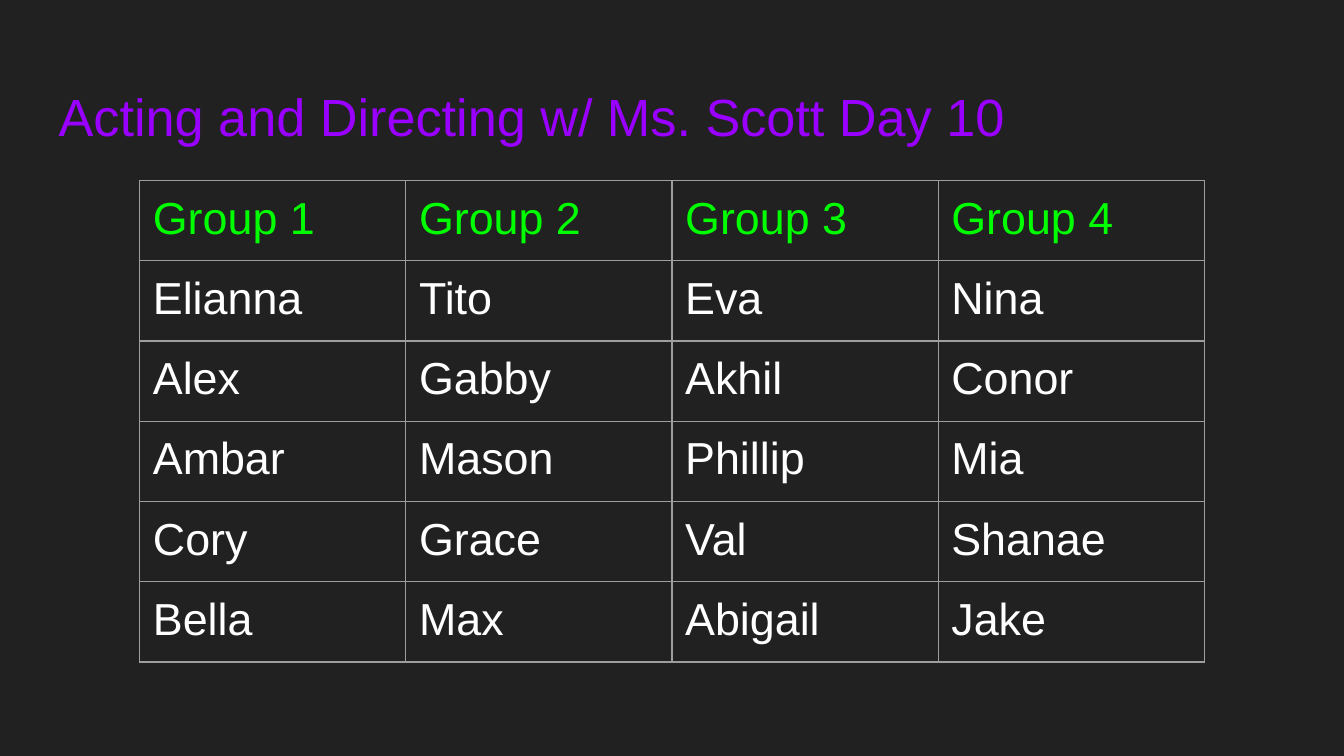
from dataclasses import dataclass

from lxml import etree
from pptx import Presentation
from pptx.dml.color import RGBColor
from pptx.enum.text import MSO_ANCHOR
from pptx.oxml.ns import qn
from pptx.util import Cm, Pt

TOP = MSO_ANCHOR.TOP

TITLE = "Acting and Directing w/ Ms. Scott Day 10"
GROUPS = {
    "Group 1": ["Elianna", "Alex", "Ambar", "Cory", "Bella"],
    "Group 2": ["Tito", "Gabby", "Mason", "Grace", "Max"],
    "Group 3": ["Eva", "Akhil", "Phillip", "Val", "Abigail"],
    "Group 4": ["Nina", "Conor", "Mia", "Shanae", "Jake"],
}


@dataclass(frozen=True)
class Theme:
    font: str = "Arial"
    background: str = "212121"
    title: str = "9900FF"
    group: str = "00FF00"
    member: str = "FFFFFF"
    border: str = "9E9E9E"
    title_size: int = 28
    table_size: int = 24
    border_width: float = 0.75


THEME = Theme()
SLIDE_WIDTH, SLIDE_HEIGHT = Cm(25.4), Cm(14.29)
INSET = Cm(0.25)
COLUMN_WIDTH, ROW_HEIGHT = Cm(5.03), Cm(1.07)
TABLE_TOP = Cm(3.41)


def write(text_frame, text, size, color):
    text_frame.text = text
    font = text_frame.paragraphs[0].runs[0].font
    font.name = THEME.font
    font.size = Pt(size)
    font.color.rgb = RGBColor.from_string(color)


def add_borders(cell):
    properties = cell._tc.get_or_add_tcPr()
    for side in ("lnL", "lnR", "lnT", "lnB"):
        line = etree.SubElement(properties, qn(f"a:{side}"), w=str(Pt(THEME.border_width)))
        fill = etree.SubElement(line, qn("a:solidFill"))
        etree.SubElement(fill, qn("a:srgbClr"), val=THEME.border)


def add_title(slide):
    title = slide.shapes.add_textbox(Cm(0.86), Cm(1.24), Cm(23.67), Cm(1.6)).text_frame
    title.word_wrap = True
    title.vertical_anchor = TOP
    title.margin_left = title.margin_right = INSET
    title.margin_top, title.margin_bottom = Cm(0.35), Cm(0.15)
    write(title, TITLE, THEME.title_size, THEME.title)


def add_groups(slide):
    column_count = len(GROUPS)
    row_count = 1 + max(len(members) for members in GROUPS.values())
    width = COLUMN_WIDTH * column_count
    table = slide.shapes.add_table(
        row_count, column_count, (SLIDE_WIDTH - width) // 2, TABLE_TOP,
        width, ROW_HEIGHT * row_count,
    ).table
    table.first_row = table.horz_banding = False

    for column, (group, members) in enumerate(GROUPS.items()):
        for row, name in enumerate([group, *members]):
            cell = table.cell(row, column)
            cell.margin_left = cell.margin_right = INSET
            cell.margin_top = cell.margin_bottom = INSET
            add_borders(cell)
            cell.fill.background()
            color = THEME.group if row == 0 else THEME.member
            write(cell.text_frame, name, THEME.table_size, color)


def main():
    presentation = Presentation()
    presentation.slide_width, presentation.slide_height = SLIDE_WIDTH, SLIDE_HEIGHT
    slide = presentation.slides.add_slide(presentation.slide_layouts[6])
    slide.background.fill.solid()
    slide.background.fill.fore_color.rgb = RGBColor.from_string(THEME.background)
    add_title(slide)
    add_groups(slide)
    presentation.save("out.pptx")


if __name__ == "__main__":
    main()
